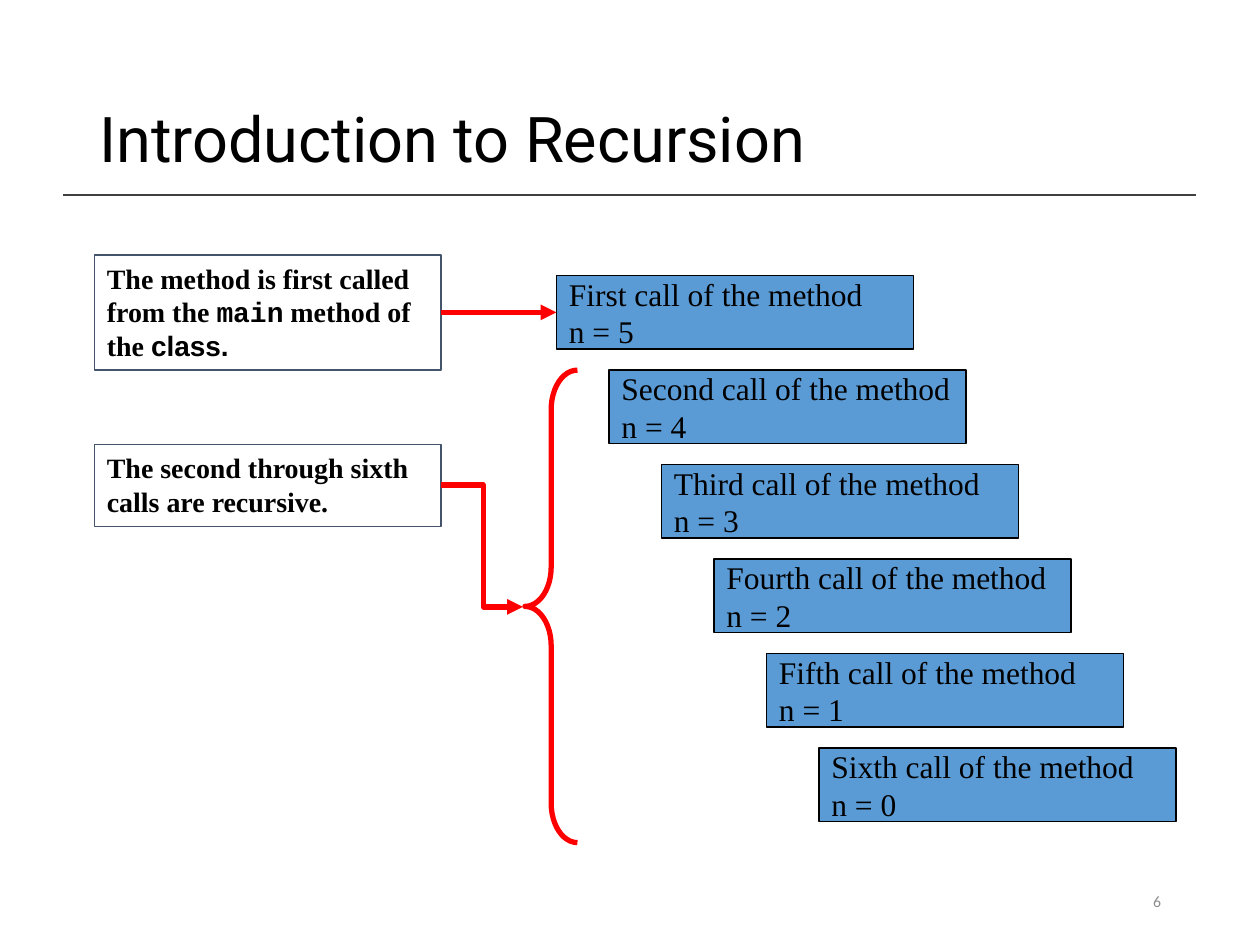
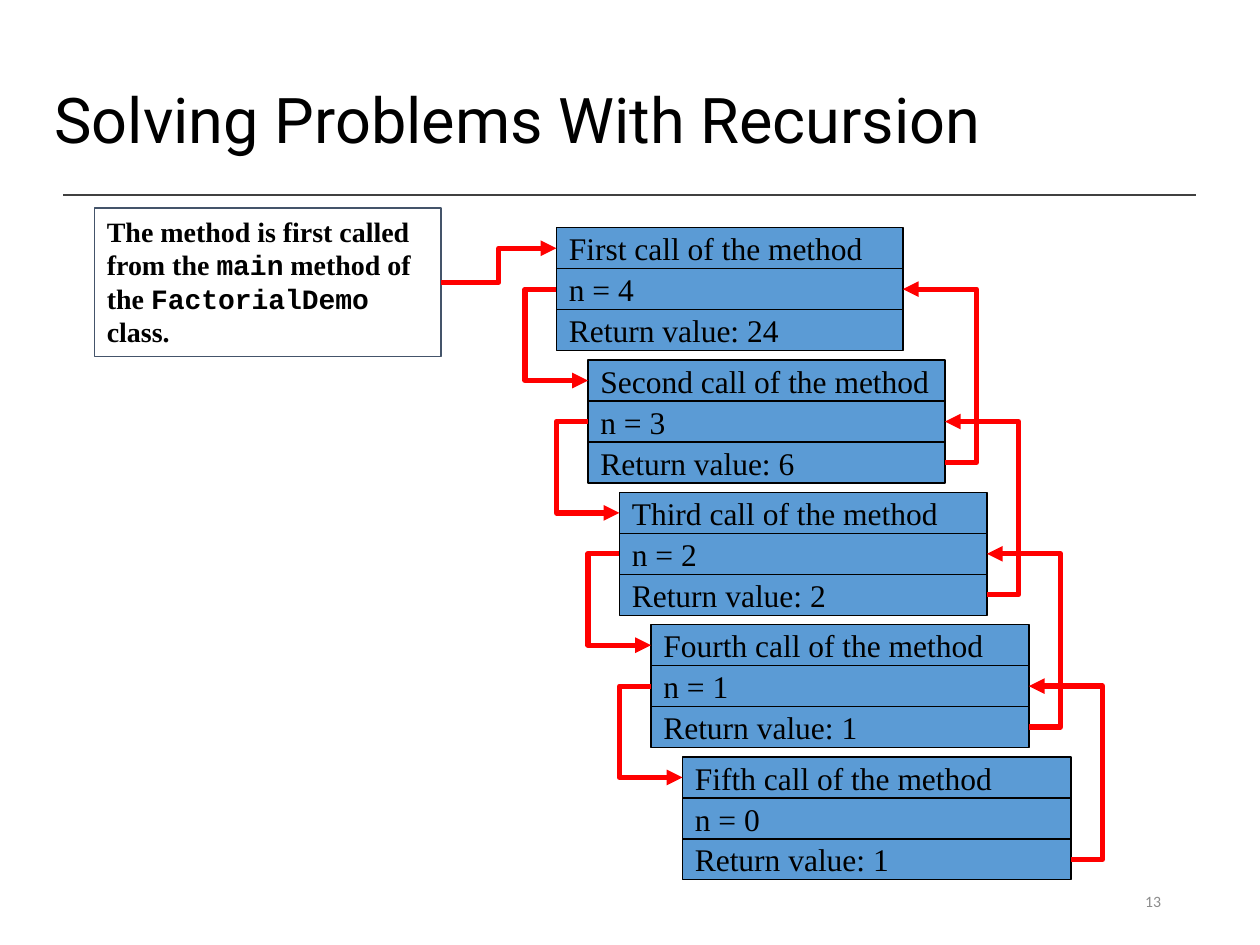
import pptx
import pptx.dml.color
import pptx.enum.shapes
import pptx.enum.text
import pptx.oxml.ns
import pptx.util
import lxml.etree

Pt = pptx.util.Pt
RGB = pptx.dml.color.RGBColor
SHAPE = pptx.enum.shapes.MSO_SHAPE
CONN = pptx.enum.shapes.MSO_CONNECTOR
ANCHOR = pptx.enum.text.MSO_ANCHOR
ALIGN = pptx.enum.text.PP_ALIGN
AUTO = pptx.enum.text.MSO_AUTO_SIZE
qn = pptx.oxml.ns.qn

BLACK = RGB(0x00, 0x00, 0x00)
BLUE = RGB(0x5B, 0x9B, 0xD5)
SLATE = RGB(0x44, 0x54, 0x6A)
RED = RGB(0xFF, 0x00, 0x00)
DARK = RGB(0x40, 0x40, 0x40)
GREY = RGB(0x8C, 0x8C, 0x8C)
SERIF, MONO = "Times New Roman", "Courier New"

TITLE = {
    "frame": {"vertical_anchor": ANCHOR.MIDDLE, "word_wrap": True, "auto_size": AUTO.NONE},
    "para": {"alignment": ALIGN.LEFT, "line_spacing": 0.9},
    "font": {"name": "Roboto", "size": Pt(36)},
    "color": BLACK,
}
CALL = {
    "frame": {"vertical_anchor": ANCHOR.MIDDLE, "word_wrap": False},
    "para": {"alignment": ALIGN.LEFT},
    "font": {"name": SERIF, "size": Pt(18)},
    "color": BLACK, "fill": BLUE, "line": (BLACK, 0.75),
}
NOTE = {
    "frame": {"vertical_anchor": ANCHOR.TOP, "word_wrap": True, "auto_size": AUTO.SHAPE_TO_FIT_TEXT},
    "para": {"alignment": ALIGN.LEFT},
    "font": {"name": SERIF, "size": Pt(16), "bold": True},
    "color": BLACK, "fill": None, "line": (SLATE, 1),
}
NUMBER = {
    "frame": {"vertical_anchor": ANCHOR.MIDDLE, "word_wrap": True},
    "para": {"alignment": ALIGN.RIGHT},
    "font": {"name": "Calibri", "size": Pt(9)},
    "color": GREY,
}


def write(sp, style, *paras):
    if "line" in style:
        sp.shadow.inherit = False
        if style["fill"] is None:
            sp.fill.background()
        else:
            sp.fill.solid()
            sp.fill.fore_color.rgb = style["fill"]
        color, width = style["line"]
        sp.line.color.rgb = color
        sp.line.width = Pt(width)
    tf = sp.text_frame
    for key, value in style["frame"].items():
        setattr(tf, key, value)
    for i, runs in enumerate(paras):
        p = tf.add_paragraph() if i else tf.paragraphs[0]
        for key, value in style["para"].items():
            setattr(p, key, value)
        for text, name in runs:
            r = p.add_run()
            r.text = text
            for key, value in style["font"].items():
                setattr(r.font, key, value)
            if name:
                r.font.name = name
            r.font.color.rgb = style["color"]
    return sp


def connect(s, kind, x1, y1, x2, y2, color=RED, width=3, head=True, bend=None):
    c = s.shapes.add_connector(kind, Pt(x1), Pt(y1), Pt(x2), Pt(y2))
    c.line.color.rgb = color
    c.line.width = Pt(width)
    spPr = c._element.spPr
    if head:
        lxml.etree.SubElement(spPr.find(qn("a:ln")), qn("a:tailEnd"), type="triangle")
    if bend is not None:
        av = spPr.find(qn("a:prstGeom")).find(qn("a:avLst"))
        lxml.etree.SubElement(av, qn("a:gd"), name="adj1", fmla=f"val {round(bend * 100000)}")
    lxml.etree.SubElement(spPr, qn("a:effectLst"))
    return c


prs = pptx.Presentation()
prs.slide_width, prs.slide_height = Pt(720), Pt(540)
layout = prs.slide_layouts[5]

slides = []
for title, rect, number in [
    ("Introduction to Recursion", (49.5, 28.8, 621, 104.4), "6"),
    ("Solving Problems With Recursion", (24, 34.5, 642, 72), "13"),
]:
    s = prs.slides.add_slide(layout)
    sp = s.shapes.title
    sp.left, sp.top, sp.width, sp.height = map(Pt, rect)
    write(sp, TITLE, [(title, None)])
    sp = s.shapes.add_textbox(Pt(508.5), Pt(500.5), Pt(162), Pt(28.8))
    write(sp, NUMBER, [(number, None)])
    slides.append(s)

rule = connect(slides[0], CONN.STRAIGHT, 36, 111.6, 683.3, 111.6, DARK, 1, False)
layout.shapes._spTree.append(rule._element)

ordinals = ["First", "Second", "Third", "Fourth", "Fifth", "Sixth"]
note_x, note_w, call_x = 54, 198, 318
note_right = note_x + note_w
intro = [("The method is first called from the ", None), ("main", MONO), (" method of the ", None)]

s = slides[0]
calls = []
for i, ordinal in enumerate(ordinals):
    sp = s.shapes.add_shape(SHAPE.RECTANGLE, Pt(call_x + 30 * i), Pt(157.5 + 54 * i), Pt(204), Pt(42))
    write(sp, CALL, [(f"{ordinal} call of the method", None)], [(f"n = {5 - i}", None)])
    calls.append(sp)

notes = []
for top, height, runs in [
    (145.75, 65.5, intro + [("class.", "Arial")]),
    (254, 46.8, [("The second through sixth calls are recursive.", None)]),
]:
    sp = s.shapes.add_shape(SHAPE.RECTANGLE, Pt(note_x), Pt(top), Pt(note_w), Pt(height))
    notes.append(write(sp, NOTE, runs))

connect(s, CONN.ELBOW, note_right, 277.2, 298.8, 346.8, bend=0.516)
brace = s.shapes.add_shape(SHAPE.LEFT_BRACE, Pt(300), Pt(211.5), Pt(30), Pt(270))
brace.adjustments[0] = 0.75
brace.shadow.inherit = False
brace.fill.background()
brace.line.color.rgb = RED
brace.line.width = Pt(3)
c = connect(s, CONN.STRAIGHT, note_right, 178.5, call_x, 178.5)
c.begin_connect(notes[0], 3)
c.end_connect(calls[0], 1)

s = slides[1]
row = 23.4
frames = []
for i, value in enumerate([24, 6, 2, 1, 1]):
    x, y, w = call_x + 18 * i, 130.2 + 75.6 * i, 198 + 6 * i
    frames.append((x, y, x + w))
    lines = [f"{ordinals[i]} call of the method", f"n = {4 - i}", f"Return value: {value}"]
    for j, text in enumerate(lines):
        sp = s.shapes.add_shape(SHAPE.RECTANGLE, Pt(x), Pt(y + row * j), Pt(w), Pt(row))
        write(sp, CALL, [(text, None)])

for (x1, y1, right1), (x2, y2, right2) in zip(frames, frames[1:]):
    connect(s, CONN.ELBOW, right2, y2 + 2.5 * row, right1, y1 + 1.5 * row, bend=-0.75)
    connect(s, CONN.ELBOW, x1, y1 + 1.5 * row, x2, y2 + 0.5 * row, bend=-1)

sp = s.shapes.add_shape(SHAPE.RECTANGLE, Pt(note_x), Pt(118.8), Pt(note_w), Pt(85))
write(sp, NOTE, intro + [("FactorialDemo", MONO), (" class.", None)])
connect(s, CONN.ELBOW, note_right, 161.3, call_x, 130.2 + 0.5 * row, bend=0.5)

prs.save("out.pptx")
